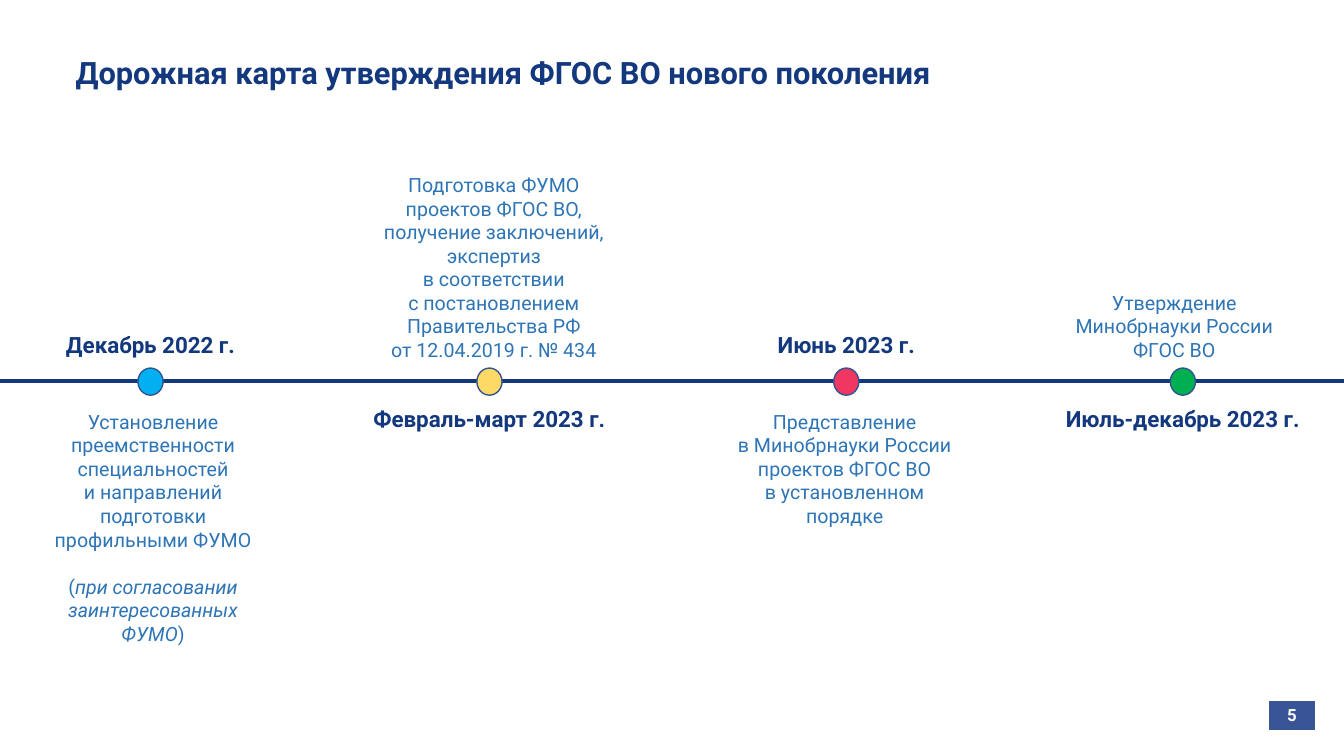
import pptx
import pptx.util
import pptx.dml.color
import pptx.enum.shapes
import pptx.enum.text
import lxml.etree

Pt = pptx.util.Pt
ALIGN = pptx.enum.text.PP_ALIGN
ANCHOR = pptx.enum.text.MSO_ANCHOR
SHAPE = pptx.enum.shapes.MSO_SHAPE

COLORS = {
    "navy": "13387D", "text": "2E75B6", "badge": "395595", "outline": "325491",
    "white": "FFFFFF", "cyan": "00B0F0", "yellow": "FFD966", "red": "EF3762",
    "green": "00B050",
}
TITLE = {"size": Pt(22), "bold": True}
DATE = {"size": Pt(16), "bold": True}
BODY = {"size": Pt(14), "bold": False}
NUMBER = {"size": Pt(12), "bold": True}

# Paragraphs are lists of (text, italic); "\n" is a line break.
MILESTONES = [
    {"date": "Декабрь 2022 г.", "date_above": True, "color": "cyan",
     "center": 107.5, "date_width": 171, "task_center": 109.4, "task_size": (174, 177),
     "task": [[("Установление преемственности специальностей", False)],
              [("и направлений подготовки профильными ФУМО", False)],
              [("(", False), ("при согласовании заинтересованных ФУМО", True),
               (")", False)]]},
    {"date": "Февраль-март 2023 г.", "date_above": False, "color": "yellow",
     "center": 349.6, "date_width": 199, "task_center": 352.8, "task_size": (177, 143),
     "task": [[("Подготовка ФУМО проектов ФГОС ВО, получение заключений, экспертиз\n"
                "в соответствии\nс постановлением Правительства РФ\n"
                "от 12.04.2019 г. № 434", False)]]},
    {"date": "Июнь 2023 г.", "date_above": True, "color": "red",
     "center": 604.5, "date_width": 171, "task_center": 603.4, "task_size": (174, 92),
     "task": [[("Представление\nв Минобрнауки России проектов ФГОС ВО\n"
                "в установленном порядке", False)]]},
    {"date": "Июль-декабрь 2023 г.", "date_above": False, "color": "green",
     "center": 844.9, "date_width": 230, "task_center": 838.8, "task_size": (187, 60),
     "task": [[("Утверждение Минобрнауки России\nФГОС ВО", False)]]},
]


def rgb(name):
    return pptx.dml.color.RGBColor.from_string(COLORS[name])


def style(font, formats, color):
    for attribute, value in {"name": "Roboto", **formats}.items():
        setattr(font, attribute, value)
    font.color.rgb = rgb(color)


def add_runs(paragraph, pieces, formats, color):
    for text, italic in pieces:
        for index, line in enumerate(text.split("\n")):
            if index:
                paragraph.add_line_break()
            run = paragraph.add_run()
            run.text = line
            style(run.font, formats, color)
            if italic:
                run.font.italic = True


def add_label(slide, box, paragraphs, formats, color, anchor, spacing=1.0, last_gap=0):
    """Centred text; last_gap is the space before a third paragraph."""
    frame = slide.shapes.add_textbox(*map(Pt, box)).text_frame
    frame.word_wrap = True
    frame.vertical_anchor = anchor
    for index, pieces in enumerate(paragraphs):
        paragraph = frame.add_paragraph() if index else frame.paragraphs[0]
        paragraph.alignment = ALIGN.CENTER
        paragraph.line_spacing = spacing
        if index == 2:
            paragraph.space_before = Pt(last_gap)
        add_runs(paragraph, pieces, formats, color)


def add_title(slide, box, text):
    title = slide.shapes.title
    title.left, title.top, title.width, title.height = map(Pt, box)
    frame = title.text_frame
    frame.word_wrap = True
    frame.auto_size = pptx.enum.text.MSO_AUTO_SIZE.NONE
    frame.vertical_anchor = ANCHOR.MIDDLE
    heading = frame.paragraphs[0]
    heading.alignment = ALIGN.LEFT
    heading.line_spacing = 0.9
    add_runs(heading, [(text, False)], TITLE, "navy")


def add_milestone(slide, axis, milestone):
    center = milestone["center"]
    above, below = axis - 10.7, axis + 17
    date_width, date_height = milestone["date_width"], 23
    date_top = axis - 35.4 if milestone["date_above"] else below
    add_label(slide, (center - date_width / 2, date_top, date_width, date_height),
              [[(milestone["date"], False)]], DATE, "navy", ANCHOR.TOP, spacing=0.8)

    width, height = milestone["task_size"]
    task_top = below if milestone["date_above"] else above - height
    anchor = ANCHOR.TOP if milestone["date_above"] else ANCHOR.BOTTOM
    add_label(slide, (milestone["task_center"] - width / 2, task_top, width, height),
              milestone["task"], BODY, "text", anchor, last_gap=16.8)

    dot_width, dot_height = 18, 19.4
    dot = slide.shapes.add_shape(
        SHAPE.FLOWCHART_CONNECTOR, Pt(center - dot_width / 2),
        Pt(axis - dot_height / 2 + 0.4), Pt(dot_width), Pt(dot_height))
    dot.shadow.inherit = False
    dot.fill.solid()
    dot.fill.fore_color.rgb = rgb(milestone["color"])
    dot.line.color.rgb = rgb("outline")
    dot.line.width = Pt(1)


def add_timeline(slide, box):
    left, top, width, height = box
    axis = top + height / 2
    line = slide.shapes.add_connector(
        pptx.enum.shapes.MSO_CONNECTOR.STRAIGHT,
        Pt(left), Pt(axis), Pt(left + width), Pt(axis))
    line.line.color.rgb = rgb("navy")
    line.line.width = Pt(2.25)
    properties = line.element.spPr
    lxml.etree.SubElement(properties, pptx.oxml.ns.qn("a:effectLst"))
    for milestone in MILESTONES:
        add_milestone(slide, axis, milestone)


def add_page_number(slide, box, number):
    table = slide.shapes.add_table(1, 1, *map(Pt, box)).table
    table.first_row = table.horz_banding = False
    cell = table.cell(0, 0)
    cell.fill.solid()
    cell.fill.fore_color.rgb = rgb("badge")
    cell.vertical_anchor = ANCHOR.MIDDLE
    paragraph = cell.text_frame.paragraphs[0]
    paragraph.alignment = ALIGN.CENTER
    add_runs(paragraph, [(number, False)], NUMBER, "white")


def main():
    deck = pptx.Presentation()
    deck.slide_width, deck.slide_height = Pt(960), Pt(540)
    slide = deck.slides.add_slide(deck.slide_layouts[5])
    add_title(slide, (46.8, 28, 864.7, 51), "Дорожная карта утверждения ФГОС ВО нового поколения")
    add_timeline(slide, (0, 78, 960, 388.4))
    add_page_number(slide, (905.8, 500.4, 34, 21.4), "5")
    deck.save("out.pptx")


if __name__ == "__main__":
    main()
